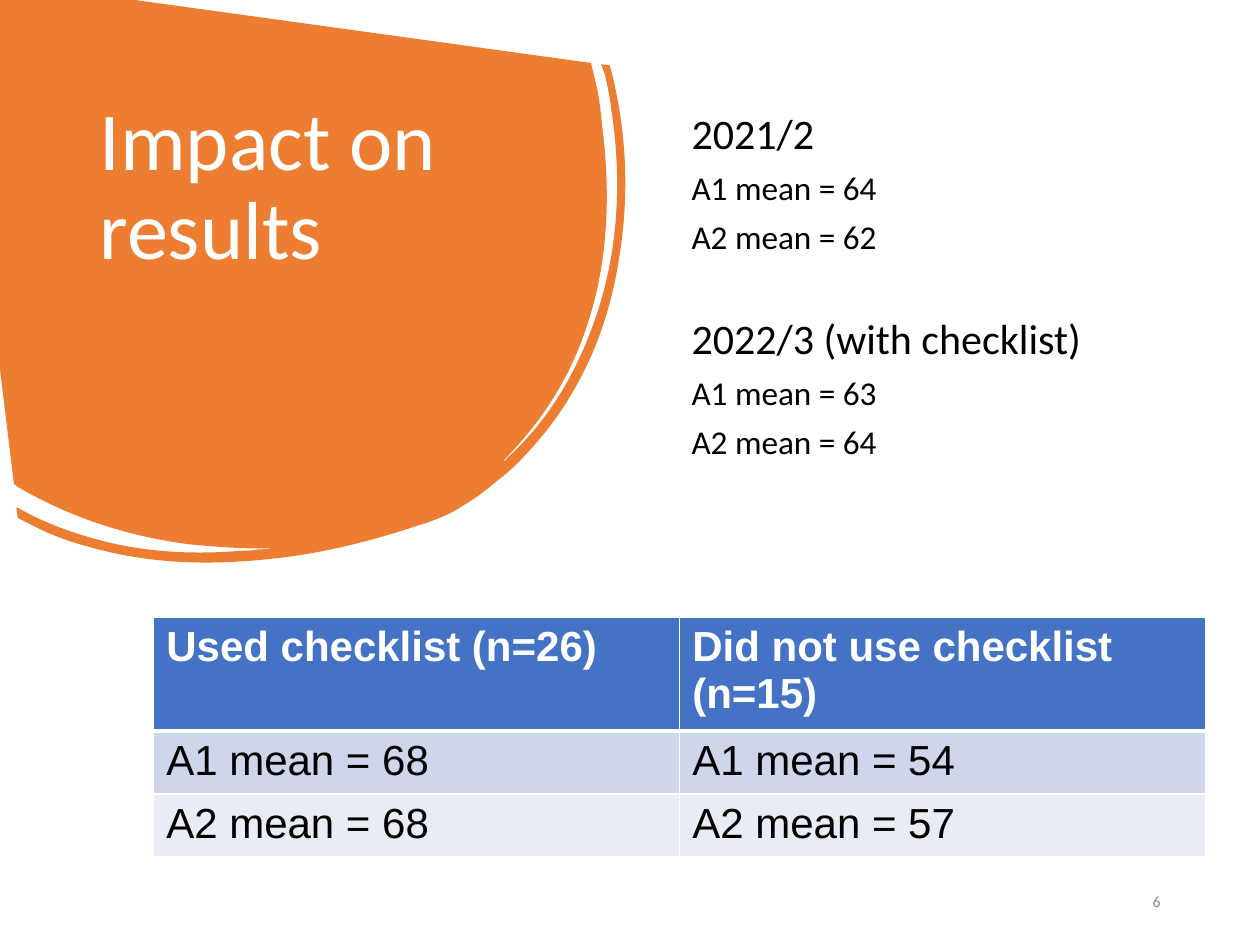
from dataclasses import dataclass
from math import cos, radians, sin

from lxml.etree import SubElement
from pptx import Presentation
from pptx.dml.color import RGBColor
from pptx.enum.text import MSO_ANCHOR, PP_ALIGN
from pptx.oxml.ns import qn
from pptx.util import Inches, Pt


@dataclass(frozen=True)
class Theme:
    orange: RGBColor = RGBColor(0xED, 0x7D, 0x31)
    blue: RGBColor = RGBColor(0x44, 0x72, 0xC4)
    band_dark: RGBColor = RGBColor(0xCF, 0xD5, 0xEA)
    band_light: RGBColor = RGBColor(0xE9, 0xEB, 0xF5)
    white: RGBColor = RGBColor(0xFF, 0xFF, 0xFF)
    black: RGBColor = RGBColor(0, 0, 0)
    grey: RGBColor = RGBColor(0x8C, 0x8C, 0x8C)
    text_font: str = "Calibri"
    table_font: str = "Arial"
    title_size: int = 47
    heading_size: int = 24
    detail_size: int = 19
    number_size: int = 9


THEME = Theme()

BLOB_FRAME = (-0.87, -1.21, 5.89, 5.72)
BLOB_ROTATION = 148.1
BLOB_START = (-0.38, -0.2)
BLOB_SEGMENTS = [
    (4.69, 0.5), (4.74, 0.71),
    (4.76, 0.81, 4.77, 0.91, 4.78, 1.01),
    (4.85, 1.57, 4.82, 2.1, 4.66, 2.58),
    (4.52, 3.01, 4.29, 3.36, 3.99, 3.66),
    (4.01, 3.66, 4.02, 3.65, 4.03, 3.63),
    (4.24, 3.44, 4.42, 3.2, 4.56, 2.92),
    (4.86, 2.32, 4.97, 1.64, 4.85, 0.86),
    (4.84, 0.77, 4.82, 0.68, 4.8, 0.59),
    (4.77, 0.51), (4.84, 0.52), (4.87, 0.64),
    (4.98, 1.12, 4.99, 1.6, 4.91, 2.07),
    (4.81, 2.7, 4.55, 3.21, 4.17, 3.61),
    (4.1, 3.69, 4.02, 3.76, 3.94, 3.82),
    (3.86, 3.89, 3.78, 3.95, 3.68, 4.01),
    (3.58, 4.08, 3.45, 4.13, 3.32, 4.17),
    (2.93, 4.3, 2.53, 4.4, 2.11, 4.44),
    (1.71, 4.48, 1.29, 4.48, 0.86, 4.38),
    (0.65, 4.33, 0.44, 4.27, 0.24, 4.16),
    (0.14, 4.11), (0.13, 4.03), (0.14, 4.03),
    (0.37, 4.16, 0.6, 4.24, 0.84, 4.3),
    (1.21, 4.39, 1.58, 4.4, 1.93, 4.37),
    (1.97, 4.37, 2.01, 4.37, 2.05, 4.36),
    (2.09, 4.36, 2.12, 4.36, 2.16, 4.35),
    (1.94, 4.36, 1.72, 4.34, 1.5, 4.32),
    (1.05, 4.26, 0.6, 4.13, 0.15, 3.87),
    (0.11, 3.84),
]

YEARS = [
    ("2021/2", ["A1 mean = 64", "A2 mean = 62"]),
    ("2022/3 (with checklist)", ["A1 mean = 63", "A2 mean = 64"]),
]

CHECKLIST_ROWS = [
    ("Used checklist (n=26)", "Did not use checklist (n=15)"),
    ("A1 mean = 68", "A1 mean = 54"),
    ("A2 mean = 68", "A2 mean = 57"),
]


def style(paragraph, size, color, font=THEME.text_font, bold=False):
    paragraph.font.name = font
    paragraph.font.size = Pt(size)
    paragraph.font.color.rgb = color
    paragraph.font.bold = bold


def place(shape, left, top, width, height):
    shape.left, shape.top = Inches(left), Inches(top)
    shape.width, shape.height = Inches(width), Inches(height)


def to_blob_frame(x, y):
    left, top, width, height = BLOB_FRAME
    dx, dy = x - left - width / 2, y - top - height / 2
    angle = radians(-BLOB_ROTATION)
    return (Inches(width / 2 + dx * cos(angle) - dy * sin(angle)),
            Inches(height / 2 + dx * sin(angle) + dy * cos(angle)))


def add_path_step(outline, tag, points):
    step = SubElement(outline, qn(tag))
    for x, y in points:
        SubElement(step, qn("a:pt"), x=str(x), y=str(y))


def add_blob(slide):
    start = to_blob_frame(*BLOB_START)
    segments = [[to_blob_frame(*pair) for pair in zip(segment[::2], segment[1::2])]
                for segment in BLOB_SEGMENTS]
    builder = slide.shapes.build_freeform(*start)
    builder.add_line_segments([points[-1] for points in segments], close=True)
    blob = builder.convert_to_shape()
    place(blob, *BLOB_FRAME)
    blob.rotation = BLOB_ROTATION
    outline = blob._element.find(".//" + qn("a:path"))
    for step in list(outline):
        outline.remove(step)
    outline.set("w", str(blob.width))
    outline.set("h", str(blob.height))
    add_path_step(outline, "a:moveTo", [start])
    for points in segments:
        add_path_step(outline, "a:lnTo" if len(points) == 1 else "a:cubicBezTo", points)
    SubElement(outline, qn("a:close"))
    blob.shadow.inherit = False
    blob.fill.solid()
    blob.fill.fore_color.rgb = THEME.orange
    blob.line.fill.background()


def add_title(slide, text):
    title = slide.shapes.title
    slide.shapes._spTree.append(title._element)
    place(title, 0.69, 0.74, 2.99, 2.64)
    frame = title.text_frame
    frame.text = text
    frame.word_wrap = True
    frame.vertical_anchor = MSO_ANCHOR.TOP
    heading = frame.paragraphs[0]
    heading.alignment = PP_ALIGN.LEFT
    heading.line_spacing = 0.9
    style(heading, THEME.title_size, THEME.white)


def add_textbox(slide, left, top, width, height):
    frame = slide.shapes.add_textbox(
        Inches(left), Inches(top), Inches(width), Inches(height)).text_frame
    frame.word_wrap = True
    return frame


def add_year_means(slide):
    frame = add_textbox(slide, 5.39, 0.85, 4.31, 5.79)
    lines = []
    for index, (year, means) in enumerate(YEARS):
        lines.append((year, THEME.heading_size, 35 if index else 7.5))
        lines += [(mean, THEME.detail_size, 7.5) for mean in means]
    for index, (text, size, gap) in enumerate(lines):
        paragraph = frame.add_paragraph() if index else frame.paragraphs[0]
        paragraph.text = text
        paragraph.line_spacing = 0.9
        paragraph.space_before = Pt(gap)
        style(paragraph, size, THEME.black)


def add_slide_number(slide, number):
    frame = add_textbox(slide, 7.06, 6.95, 2.25, 0.4)
    frame.vertical_anchor = MSO_ANCHOR.MIDDLE
    paragraph = frame.paragraphs[0]
    paragraph.text = str(number)
    paragraph.alignment = PP_ALIGN.RIGHT
    paragraph.space_after = Pt(6)
    style(paragraph, THEME.number_size, THEME.grey)


def set_borders(cell, top, bottom):
    properties = cell._tc.get_or_add_tcPr()
    sides = [("a:lnL", 1), ("a:lnR", 1), ("a:lnT", top), ("a:lnB", bottom)]
    for index, (tag, width) in enumerate(sides):
        border = SubElement(properties, qn(tag), w=str(Pt(width)))
        fill = SubElement(border, qn("a:solidFill"))
        SubElement(fill, qn("a:srgbClr"), val=str(THEME.white))
        properties.insert(index, border)


def add_checklist_table(slide):
    table = slide.shapes.add_table(
        len(CHECKLIST_ROWS), 2, Inches(1.22), Inches(4.9), Inches(8.35), Inches(1.23)).table
    row_fills = [THEME.blue, THEME.band_dark, THEME.band_light]
    for row_index, (texts, fill) in enumerate(zip(CHECKLIST_ROWS, row_fills)):
        header = row_index == 0
        for column, text in enumerate(texts):
            cell = table.cell(row_index, column)
            cell.text = text
            cell.fill.solid()
            cell.fill.fore_color.rgb = fill
            style(cell.text_frame.paragraphs[0], THEME.heading_size,
                  THEME.white if header else THEME.black, THEME.table_font, header)
            set_borders(cell, 3 if row_index == 1 else 1, 3 if header else 1)


def main():
    presentation = Presentation()
    presentation.slide_width, presentation.slide_height = Inches(10), Inches(7.5)
    slide = presentation.slides.add_slide(presentation.slide_layouts[5])
    add_blob(slide)
    add_title(slide, "Impact on results")
    add_year_means(slide)
    add_slide_number(slide, 6)
    add_checklist_table(slide)
    presentation.save("out.pptx")


if __name__ == "__main__":
    main()
